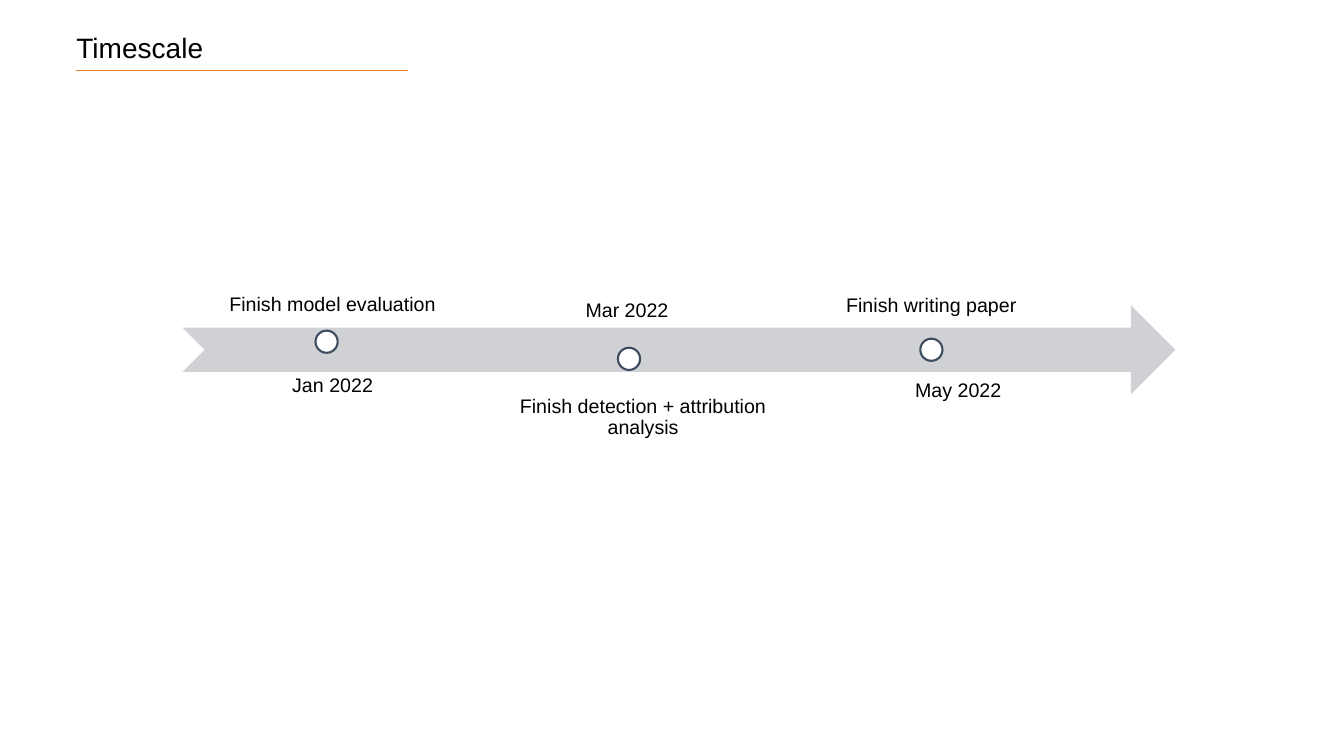
from dataclasses import dataclass
from typing import NamedTuple

import pptx
import pptx.dml.color
import pptx.enum.shapes
import pptx.enum.text
import pptx.oxml
import pptx.oxml.ns
import pptx.util

Kind = pptx.enum.shapes.MSO_SHAPE
Anchor = pptx.enum.text.MSO_ANCHOR
Align = pptx.enum.text.PP_ALIGN

WIDE = pptx.util.Inches(13.33)
HIGH = pptx.util.Inches(7.5)
COLS, ROWS = 160, 90


@dataclass(frozen=True)
class Theme:
    font: str = "Arial"
    ink: str = "000000"
    rule: str = "ED7D31"
    band: str = "CFD1D4"
    dot: str = "FFFFFF"
    ring: str = "3E4C60"
    head: float = 20
    body: float = 14
    thin: float = 0.5
    thick: float = 1.5


class Box(NamedTuple):
    """Left, top, width and height in grid columns and rows."""
    x: float
    y: float
    w: float
    h: float


class Step(NamedTuple):
    task: str
    area: Box
    anchor: Anchor
    date: str
    left: float
    top: float
    dot: float


THEME = Theme()
DOT = 2.64
FIRST, PITCH = 37.56, 36
DATE_W, DATE_H = 17.64, 4.08
PAD = pptx.util.Inches(0.11)

STEPS = (
    Step("Finish model evaluation", Box(24.48, 32.04, 30.24, 6.84),
         Anchor.BOTTOM, "Jan 2022", 33.6, 43.8, 39.36),
    Step("Finish detection + attribution analysis", Box(59.4, 45.84, 34.32, 6.6),
         Anchor.TOP, "Mar 2022", 68.52, 34.92, 41.4),
    Step("Finish writing paper", Box(93.72, 28.44, 34.32, 10.56),
         Anchor.BOTTOM, "May 2022", 107.76, 44.4, 40.32),
)


def place(box: Box) -> tuple[int, ...]:
    """Turn grid units into slide lengths."""
    return (round(box.x * WIDE / COLS), round(box.y * HIGH / ROWS),
            round(box.w * WIDE / COLS), round(box.h * HIGH / ROWS))


def tint(code: str) -> pptx.dml.color.RGBColor:
    return pptx.dml.color.RGBColor.from_string(code)


def write(shapes, words: str, box: Box, size: float):
    """Add a left-aligned text box and return its frame."""
    frame = shapes.add_textbox(*place(box)).text_frame
    frame.word_wrap = True
    line = frame.paragraphs[0]
    line.text = words
    line.font.name = THEME.font
    line.font.size = pptx.util.Pt(size)
    line.font.color.rgb = tint(THEME.ink)
    return frame


def draw(shapes, kind: Kind, box: Box, fill: str, edge: str = "") -> None:
    shape = shapes.add_shape(kind, *place(box))
    shape.shadow.inherit = False
    shape.fill.solid()
    shape.fill.fore_color.rgb = tint(fill)
    if edge:
        shape.line.color.rgb = tint(edge)
        shape.line.width = pptx.util.Pt(THEME.thick)
    else:
        shape.line.fill.background()


def rule(shapes, box: Box) -> None:
    x, y, w, h = place(box)
    line = shapes.add_connector(
        pptx.enum.shapes.MSO_CONNECTOR.STRAIGHT, x, y, x + w, y + h)
    line.line.color.rgb = tint(THEME.rule)
    line.line.width = pptx.util.Pt(THEME.thin)
    props = line._element.spPr
    props.append(pptx.oxml.parse_xml(
        f"<a:effectLst {pptx.oxml.ns.nsdecls('a')}/>"))


def mark(shapes, step: Step, x: float) -> None:
    """Draw one milestone: task, dot and date."""
    frame = write(shapes, step.task, step.area, THEME.body)
    frame.vertical_anchor = step.anchor
    frame.margin_left = frame.margin_right = PAD
    frame.margin_top = frame.margin_bottom = PAD
    frame.paragraphs[0].alignment = Align.CENTER
    frame.paragraphs[0].line_spacing = 0.9
    draw(shapes, Kind.OVAL, Box(x, step.dot, DOT, DOT), THEME.dot, THEME.ring)
    write(shapes, step.date, Box(step.left, step.top, DATE_W, DATE_H), THEME.body)


def main() -> None:
    deck = pptx.Presentation()
    deck.slide_width, deck.slide_height = WIDE, HIGH
    shapes = deck.slides.add_slide(deck.slide_layouts[6]).shapes
    write(shapes, "Timescale", Box(7.92, 3, 51.48, 5.28), THEME.head)
    rule(shapes, Box(9, 8.4, 39.6, 0))
    draw(shapes, Kind.NOTCHED_RIGHT_ARROW,
         Box(21.72, 36.36, 118.2, 10.56), THEME.band)
    for i, step in enumerate(STEPS):
        mark(shapes, step, FIRST + i * PITCH)
    deck.save("out.pptx")


if __name__ == "__main__":
    main()
